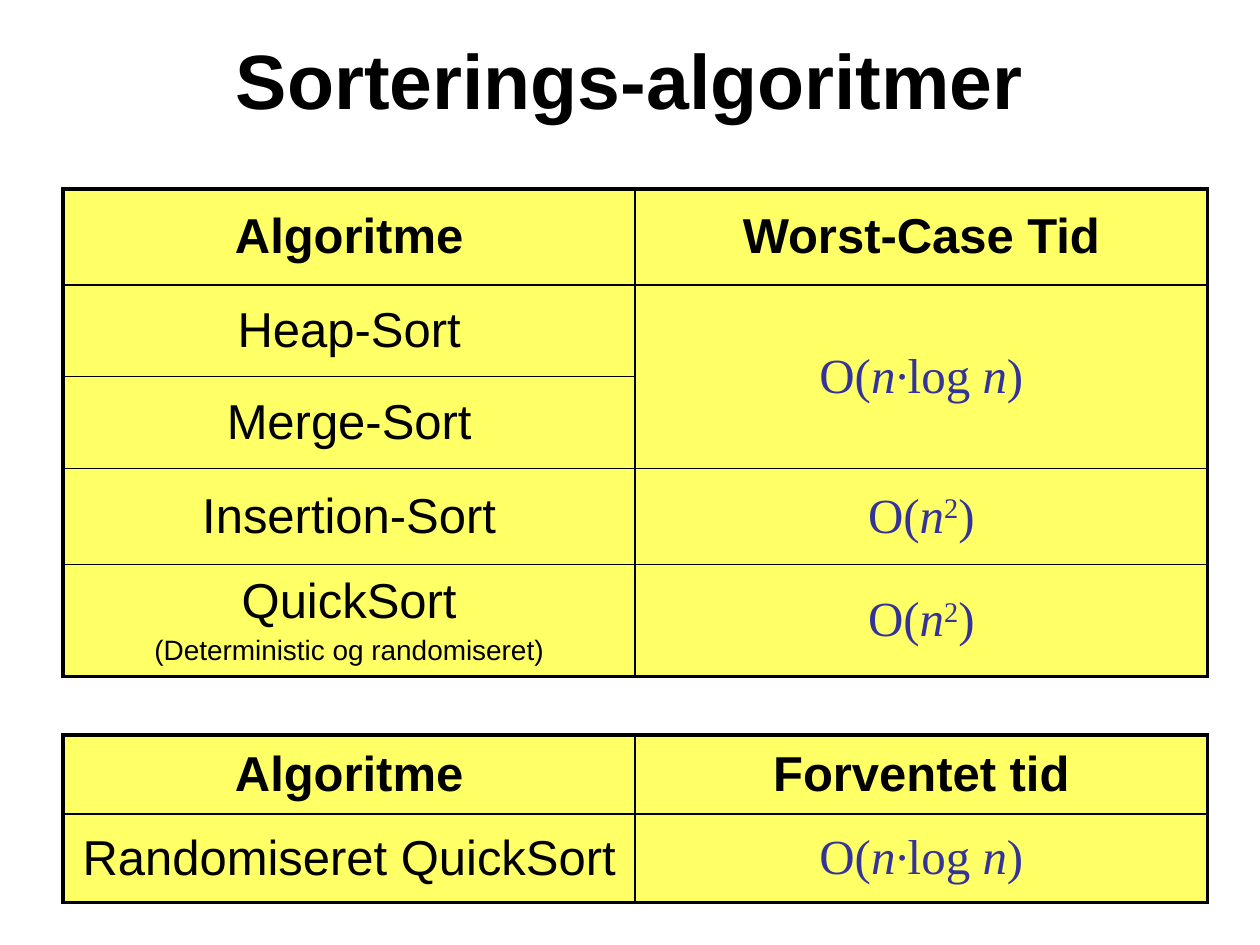
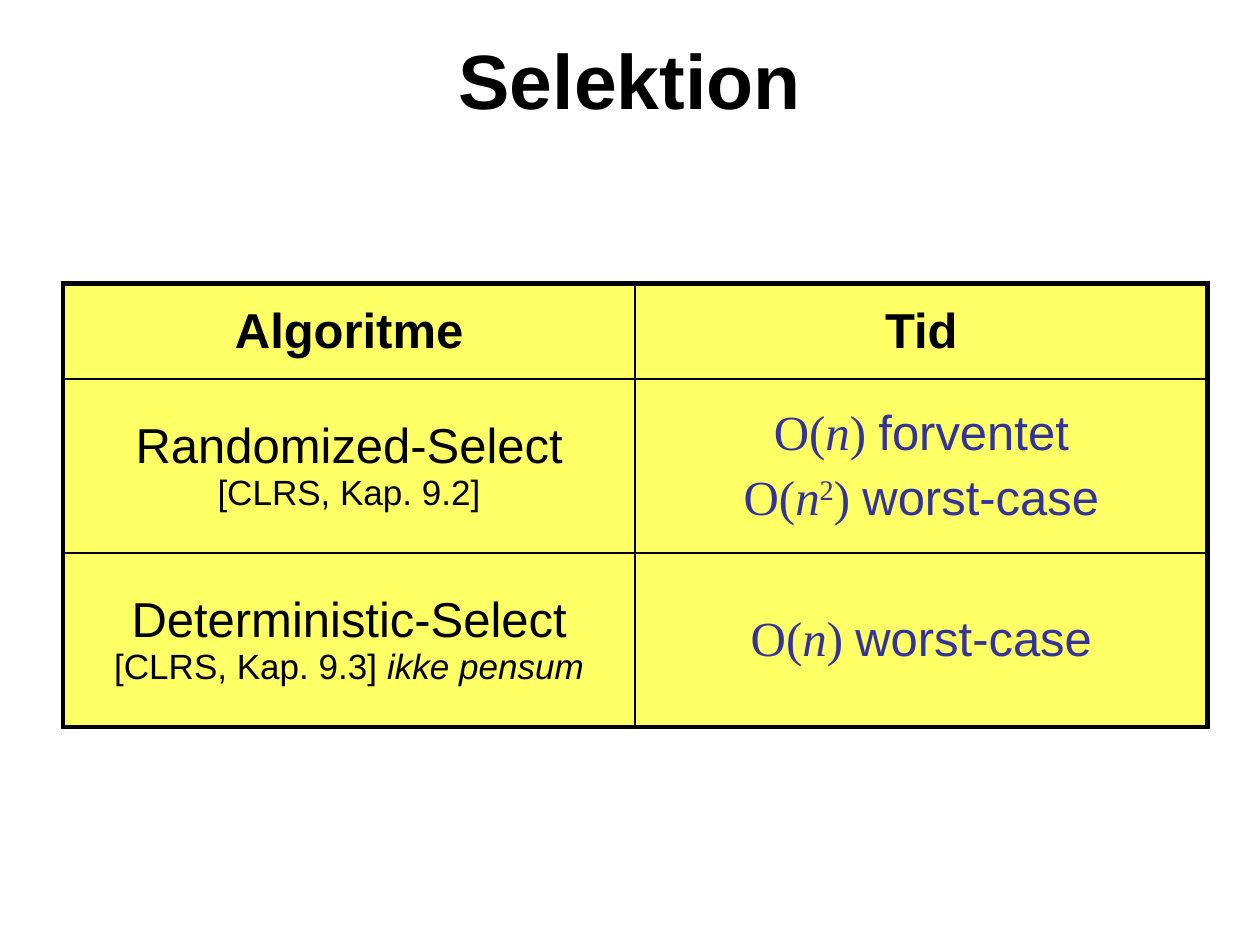
"""Build two slides that compare running times of sorting and selection algorithms."""
from lxml import etree
from pptx import Presentation
from pptx.dml.color import RGBColor
from pptx.enum.text import MSO_ANCHOR, PP_ALIGN
from pptx.oxml.ns import qn
from pptx.util import Pt

MIDDLE = MSO_ANCHOR.MIDDLE
CENTER = PP_ALIGN.CENTER

BLACK = RGBColor(0x00, 0x00, 0x00)
BLUE = RGBColor(0x33, 0x33, 0x99)
YELLOW = RGBColor(0xFF, 0xFF, 0x66)

SANS = "Arial"
SERIF = "Times New Roman"
LEFT = 36
COLUMN_WIDTH = 327
BODY_SIZE = 28
INNER_BORDER = 1

# style: font, size, colour, bold, italic, superscript
STYLES = {
    "title": (SANS, 44, BLACK, True, False, False),
    "head": (SANS, BODY_SIZE, BLACK, True, False, False),
    "name": (SANS, BODY_SIZE, BLACK, False, False, False),
    "note": (SANS, 16, BLACK, False, False, False),
    "source": (SANS, 20, BLACK, False, False, False),
    "remark": (SANS, 20, BLACK, False, True, False),
    "case": (SANS, BODY_SIZE, BLUE, False, False, False),
    "math": (SERIF, BODY_SIZE, BLUE, False, False, False),
    "variable": (SERIF, BODY_SIZE, BLUE, False, True, False),
    "power": (SERIF, BODY_SIZE, BLUE, False, False, True),
}

LINEAR = [("O(", "math"), ("n", "variable"), (") ", "math")]
QUADRATIC = [("O(", "math"), ("n", "variable"), ("2", "power"), (")", "math")]
LOG_LINEAR = [("O(", "math"), ("n·", "variable"), ("log ", "math"),
              ("n", "variable"), (")", "math")]
ALGORITHM_HEAD = [[("Algoritme", "head")]]

WORST_CASE_ROWS = [
    (ALGORITHM_HEAD, [[("Worst-Case Tid", "head")]]),
    ([[("Heap-Sort", "name")]], [LOG_LINEAR]),
    ([[("Merge-Sort", "name")]], None),
    ([[("Insertion-Sort", "name")]], [QUADRATIC]),
    ([[("QuickSort", "name")], [("(Deterministic og randomiseret)", "note")]], [QUADRATIC]),
]
EXPECTED_ROWS = [
    (ALGORITHM_HEAD, [[("Forventet tid", "head")]]),
    ([[("Randomiseret QuickSort", "name")]], [LOG_LINEAR]),
]
SELECTION_ROWS = [
    (ALGORITHM_HEAD, [[("Tid", "head")]]),
    ([[("Randomized-Select", "name")], [("[CLRS, Kap. 9.2]", "source")]],
     [LINEAR + [("forventet", "case")],
      QUADRATIC[:-1] + [(") ", "math"), ("worst-case", "case")]]),
    ([[("Deterministic-Select", "name")],
      [("[CLRS, Kap. 9.3] ", "source"), ("ikke pensum", "remark")]],
     [LINEAR + [("worst-case", "case")]]),
]

# slide: title, then tables as top, outer border, row heights, rows
SLIDES = [
    ("Sorterings-algoritmer", [
        (108, 2.25, [54.75, 52.5, 52.5, 54.75, 64], WORST_CASE_ROWS),
        (420, 2.25, [45.25, 50.5], EXPECTED_ROWS),
    ]),
    ("Selektion", [
        (162, 3, [54.5, 99.5, 99.5], SELECTION_ROWS),
    ]),
]


def write_paragraphs(text_frame, paragraphs):
    for index, pieces in enumerate(paragraphs):
        paragraph = text_frame.add_paragraph() if index else text_frame.paragraphs[0]
        paragraph.alignment = CENTER
        if index and pieces[0][1] != "source":
            paragraph.space_before = Pt(0.2 * STYLES[pieces[0][1]][1])
        for text, style in pieces:
            name, size, color, bold, italic, superscript = STYLES[style]
            run = paragraph.add_run()
            run.text = text
            run.font.name, run.font.size = name, Pt(size)
            run.font.bold, run.font.italic = bold, italic
            run.font.color.rgb = color
            if superscript:
                run.font._element.set("baseline", "30000")


def set_borders(cell, widths):
    properties = cell._tc.get_or_add_tcPr()
    for index, (side, width) in enumerate(widths.items()):
        line = etree.Element(qn(f"a:ln{side}"), w=str(Pt(width)))
        fill = etree.SubElement(line, qn("a:solidFill"))
        etree.SubElement(fill, qn("a:srgbClr"), val=str(BLACK))
        properties.insert(index, line)


presentation = Presentation()
presentation.slide_width, presentation.slide_height = Pt(720), Pt(540)

for title, tables in SLIDES:
    slide = presentation.slides.add_slide(presentation.slide_layouts[6])
    title_box = slide.shapes.add_textbox(Pt(LEFT), Pt(0), Pt(648), Pt(90))
    title_box.text_frame.word_wrap = True
    title_box.text_frame.vertical_anchor = MIDDLE
    write_paragraphs(title_box.text_frame, [[(title, "title")]])

    for top, outer_border, heights, rows in tables:
        table = slide.shapes.add_table(len(rows), 2, Pt(LEFT), Pt(top),
                                       Pt(2 * COLUMN_WIDTH), Pt(sum(heights))).table
        table.first_row = table.horz_banding = False
        for column in table.columns:
            column.width = Pt(COLUMN_WIDTH)
        for row_index, (height, contents) in enumerate(zip(heights, rows)):
            table.rows[row_index].height = Pt(height)
            for column_index, paragraphs in enumerate(contents):
                cell = table.cell(row_index, column_index)
                cell.vertical_anchor = MIDDLE
                cell.fill.solid()
                cell.fill.fore_color.rgb = YELLOW
                on_edge = {"L": column_index == 0, "R": column_index == 1,
                           "T": row_index == 0, "B": row_index == len(rows) - 1}
                set_borders(cell, {side: outer_border if edge else INNER_BORDER
                                   for side, edge in on_edge.items()})
                if paragraphs is None:
                    table.cell(row_index - 1, column_index).merge(cell)
                else:
                    write_paragraphs(cell.text_frame, paragraphs)

presentation.save("out.pptx")
